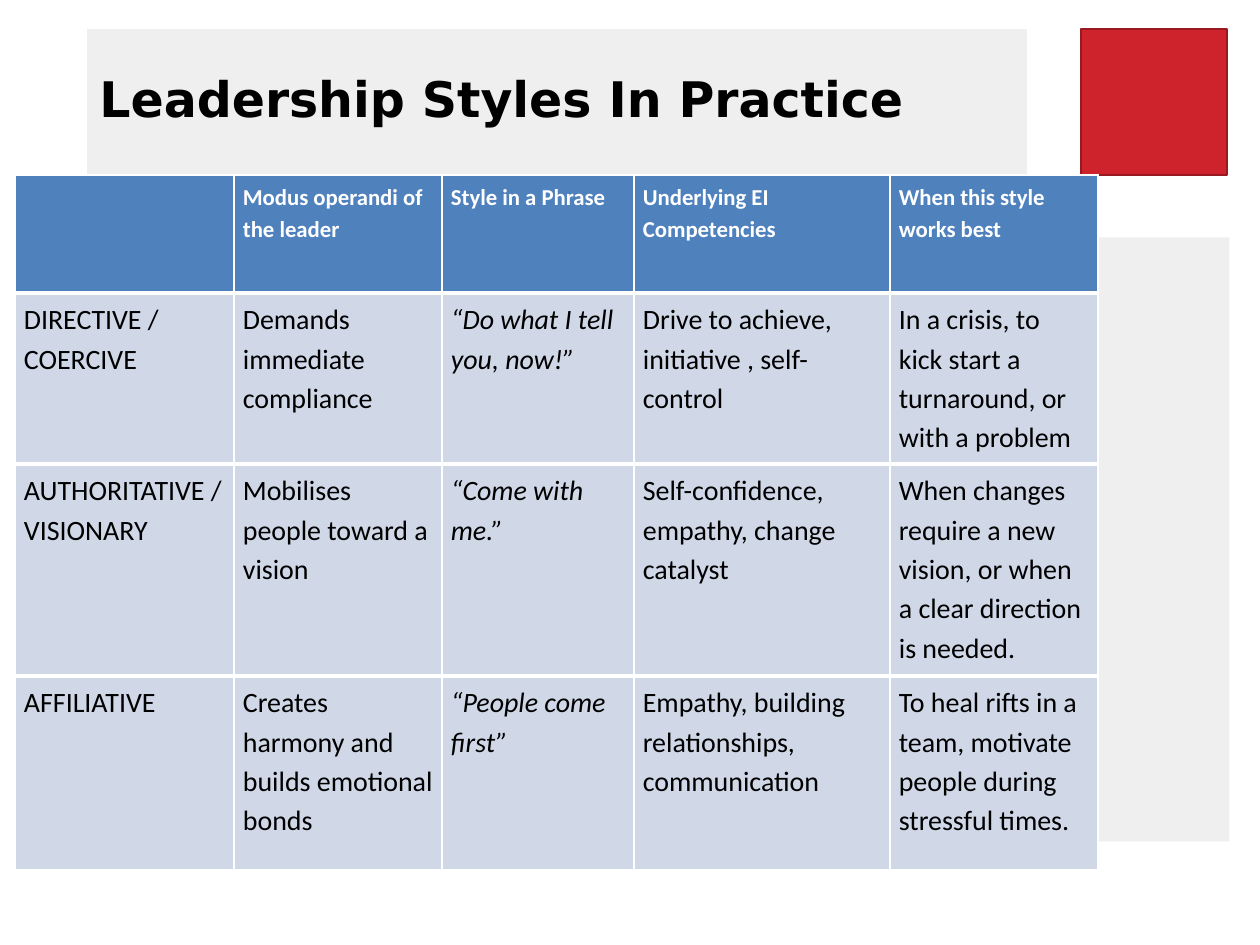
from lxml import etree
from pptx import Presentation
from pptx import util as u
from pptx.dml.color import RGBColor
from pptx.enum import shapes, text
from pptx.oxml.ns import qn

EMU_PER_PX = 914400 / 126
COLORS = {
    "panel": "EFEFF0", "accent": "CE222C", "accent_edge": "981921",
    "header": "4F81BD", "body": "D0D8E8", "white": "FFFFFF", "black": "000000",
}
FORMATS = {
    "title": {"name": "DejaVu Sans", "size": u.Pt(28), "bold": True},
    "header": {"name": "Calibri", "size": u.Pt(13), "bold": True},
    "body": {"name": "Calibri", "size": u.Pt(16), "bold": False},
    "phrase": {"name": "Calibri", "size": u.Pt(16), "bold": False, "italic": True},
}
CELL_MARGINS = {"margin_left": 9, "margin_right": 9, "margin_top": 5, "margin_bottom": 5}
PHRASE_COLUMN = 2
COLUMN_WIDTHS = [219, 208, 192, 256, 208]
ROW_HEIGHTS = [118, 171, 212, 195]
STYLES = [
    ["", "Modus operandi of the leader", "Style in a Phrase",
     "Underlying EI Competencies", "When this style works best"],
    ["DIRECTIVE / COERCIVE", "Demands immediate compliance", "“Do what I tell you, now!”",
     "Drive to achieve, initiative , self-control",
     "In a crisis, to kick start a turnaround, or with a problem"],
    ["AUTHORITATIVE /\nVISIONARY", "Mobilises people toward a vision", "“Come with me.”",
     "Self-confidence, empathy, change catalyst",
     "When changes require a new vision, or when a clear direction is needed."],
    ["AFFILIATIVE", "Creates harmony and builds emotional bonds", "“People come first”",
     "Empathy, building relationships, communication",
     "To heal rifts in a team, motivate people during stressful times."],
]


def px(length):
    return u.Emu(round(length * EMU_PER_PX))


def color(name):
    return RGBColor.from_string(COLORS[name])


class Deck:
    def __init__(self, width, height):
        self.prs = Presentation()
        self.prs.slide_width, self.prs.slide_height = px(width), px(height)
        self.slide = self.prs.slides.add_slide(self.prs.slide_layouts[6])

    def panel(self, box, fill, edge=None, rotation=0):
        rect = self.slide.shapes.add_shape(shapes.MSO_SHAPE.RECTANGLE, *map(px, box))
        rect.shadow.inherit = False
        rect.rotation = rotation
        rect.fill.solid()
        rect.fill.fore_color.rgb = color(fill)
        if edge:
            rect.line.color.rgb = color(edge)
            rect.line.width = u.Pt(1)
        else:
            rect.line.fill.background()
        return rect

    def wording(self, frame, words, style, ink, spacing):
        frame.text = words
        for paragraph in frame.paragraphs:
            paragraph.alignment = text.PP_ALIGN.LEFT
            paragraph.line_spacing = spacing
            for run in paragraph.runs:
                for attribute, value in FORMATS[style].items():
                    setattr(run.font, attribute, value)
                run.font.color.rgb = color(ink)

    def title(self, box, words):
        frame = self.panel(box, "panel").text_frame
        frame.word_wrap = True
        frame.vertical_anchor = text.MSO_ANCHOR.MIDDLE
        self.wording(frame, words, "title", "black", 0.9)

    def borders(self, cell, widths):
        properties = cell._tc.get_or_add_tcPr()
        for side, points in widths.items():
            line = etree.SubElement(properties, qn(f"a:ln{side}"), w=str(u.Pt(points)))
            solid = etree.SubElement(line, qn("a:solidFill"))
            etree.SubElement(solid, qn("a:srgbClr"), val=COLORS["white"])

    def cell(self, cell, words, row, column):
        heading = row == 0
        for attribute, length in CELL_MARGINS.items():
            setattr(cell, attribute, px(length))
        self.borders(cell, {"L": 1, "R": 1, "T": 1 if heading else 3, "B": 3})
        cell.fill.solid()
        cell.fill.fore_color.rgb = color("header" if heading else "body")
        if words:
            style = "header" if heading else "phrase" if column == PHRASE_COLUMN else "body"
            self.wording(cell.text_frame, words, style, "white" if heading else "black", 1.15)

    def table(self, left, top, widths, heights, rows):
        box = (left, top, sum(widths), sum(heights))
        grid = self.slide.shapes.add_table(len(heights), len(widths), *map(px, box)).table
        for column, width in zip(grid.columns, widths):
            column.width = px(width)
        for row, height in zip(grid.rows, heights):
            row.height = px(height)
        for r, row in enumerate(rows):
            for c, words in enumerate(row):
                self.cell(grid.cell(r, c), words, r, c)


def main():
    deck = Deck(1260, 945)
    deck.panel((853, 465, 604, 149), "panel", rotation=90)
    deck.panel((1081, 29, 146, 146), "accent", edge="accent_edge")
    deck.title((87, 29, 940, 146), "Leadership Styles In Practice")
    deck.table(15, 175, COLUMN_WIDTHS, ROW_HEIGHTS, STYLES)
    deck.prs.save("out.pptx")


if __name__ == "__main__":
    main()
